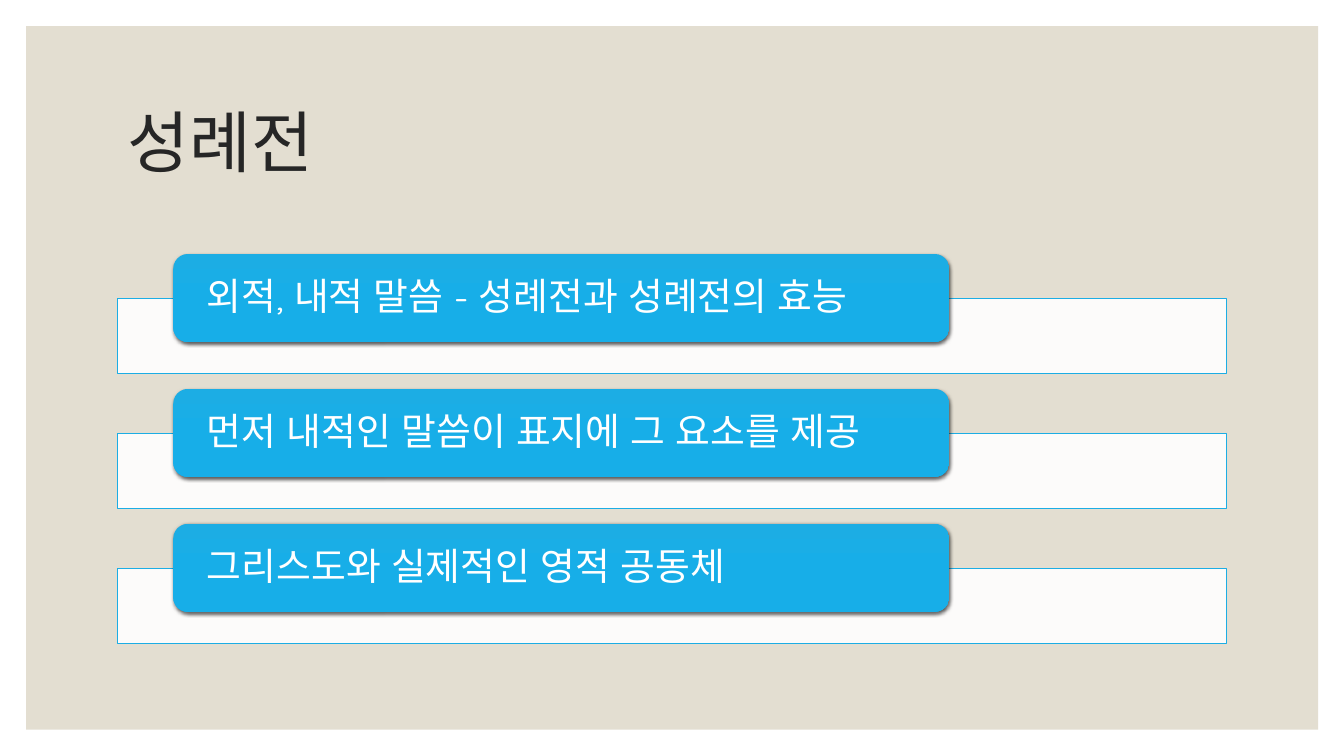
from lxml import etree
from pptx import Presentation
from pptx.dml.color import RGBColor
from pptx.enum.shapes import MSO_SHAPE as Preset
from pptx.enum.text import MSO_ANCHOR as Anchor, PP_ALIGN as Align
from pptx.oxml import parse_xml
from pptx.oxml.ns import nsdecls, qn
from pptx.util import Cm, Pt

FONT = "Quicksand"
COLORS = {
    "panel": "E3DED1",
    "title": "262626",
    "white": "FFFFFF",
    "accent": "1CADE4",
    "accent_end": "17AEE8",
}
TOPICS = [
    "외적, 내적 말씀 - 성례전과 성례전의 효능",
    "먼저 내적인 말씀이 표지에 그 요소를 제공",
    "그리스도와 실제적인 영적 공동체",
]


def color(name):
    return RGBColor.from_string(COLORS[name])


def write_text(shape, text, *, size, ink, inset, inset_y=0):
    frame = shape.text_frame
    frame.word_wrap = True
    frame.vertical_anchor = Anchor.MIDDLE
    frame.margin_left = frame.margin_right = Cm(inset)
    frame.margin_top = frame.margin_bottom = Cm(inset_y)
    paragraph = frame.paragraphs[0]
    paragraph.alignment = Align.LEFT
    paragraph.line_spacing = 0.9
    run = paragraph.add_run()
    run.text = text
    run.font.name = FONT
    run.font.size = Pt(size)
    run.font.color.rgb = color(ink)
    east_asian = etree.SubElement(run.font._element, qn("a:ea"))
    east_asian.set("typeface", FONT)


def add_box(slide, preset, left, top, width, height):
    shape = slide.shapes.add_shape(preset, Cm(left), Cm(top), Cm(width), Cm(height))
    shape.shadow.inherit = False
    shape.line.fill.background()
    return shape


def add_panel(slide, left, top, width, height):
    panel = add_box(slide, Preset.RECTANGLE, left, top, width, height)
    panel.fill.solid()
    panel.fill.fore_color.rgb = color("panel")


def add_title(slide, text, left, top, width, height):
    title = slide.shapes.add_textbox(Cm(left), Cm(top), Cm(width), Cm(height))
    write_text(title, text, size=48, ink="title", inset=0.25, inset_y=0.13)


def add_bar(slide, left, top, width, height):
    bar = add_box(slide, Preset.RECTANGLE, left, top, width, height)
    bar.fill.solid()
    bar.fill.fore_color.rgb = color("white")
    bar.line.color.rgb = color("accent")
    bar.line.width = Pt(0.5)
    # 90 % opaque
    fill_color = bar._element.spPr.find(qn("a:solidFill"))[0]
    etree.SubElement(fill_color, qn("a:alpha")).set("val", "90000")


def add_label(slide, text, left, top, width, height):
    label = add_box(slide, Preset.ROUNDED_RECTANGLE, left, top, width, height)
    label.fill.gradient()
    label.fill.gradient_angle = 270
    stops = zip(label.fill.gradient_stops, (0, 0.5), ("accent", "accent_end"))
    for stop, position, name in stops:
        stop.position = position
        stop.color.rgb = color(name)
    # Soft shadow below the label
    label._element.spPr.find(qn("a:effectLst")).append(parse_xml(
        f'<a:outerShdw {nsdecls("a")} blurRad="{Pt(3)}" dist="{Pt(1)}" '
        'dir="5400000" algn="ctr" rotWithShape="0"><a:srgbClr val="000000">'
        '<a:alpha val="63000"/></a:srgbClr></a:outerShdw>'))
    write_text(label, text, size=27, ink="white", inset=0.74)


def add_topics(slide, topics, left, top, width, pitch):
    label_height, bar_offset = 2.22, 1.12
    for index, topic in enumerate(topics):
        row_top = top + index * pitch
        add_bar(slide, left, row_top + bar_offset, width, 1.9)
        add_label(slide, topic, left + 0.05 * width, row_top,
                  0.7 * width, label_height)


def main():
    presentation = Presentation()
    presentation.slide_width = Cm(33.87)
    presentation.slide_height = Cm(19.05)
    slide = presentation.slides.add_slide(presentation.slide_layouts[6])

    left, width = 2.97, 27.94
    add_panel(slide, 0.66, 0.66, 32.56, 17.73)
    add_title(slide, "성례전", left, 1.78, width, 3.81)
    add_topics(slide, TOPICS, left, 6.4, width, 3.4)

    presentation.save("out.pptx")


if __name__ == "__main__":
    main()
